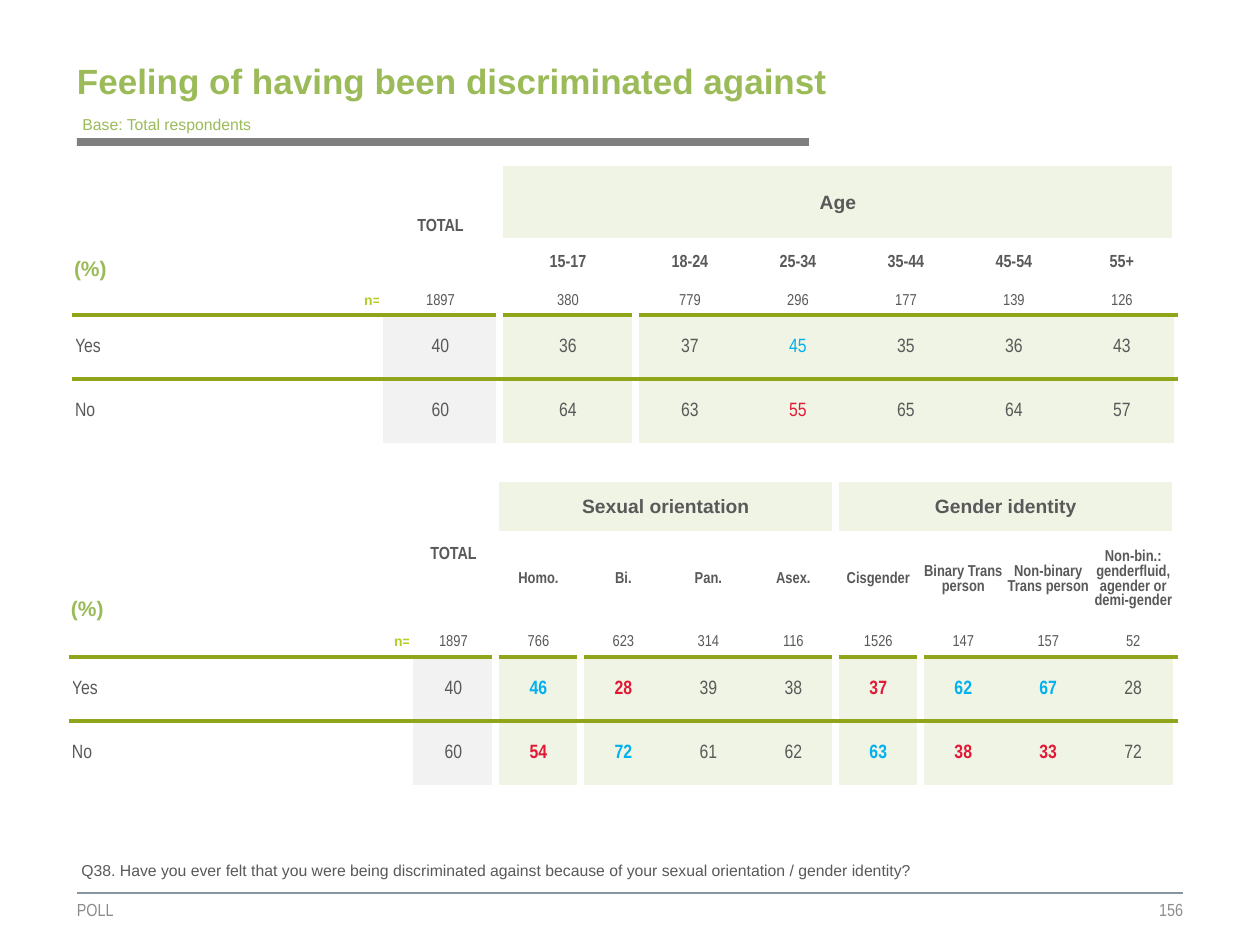
from lxml import etree
from pptx import Presentation, util as u
from pptx.dml.color import RGBColor
from pptx.enum import shapes, text
from pptx.oxml import ns

GREEN, GRAY, WHITE = "9BBB59", "595959", "FFFFFF"
PALE, LIGHT, RULE = "EFF4E4", "F2F2F2", "91A51B"
MARKS = {"+": "00B0F0", "-": "E31836"}
NARROW = "Arial Narrow"
LEFT, MID, RIGHT = text.PP_ALIGN.LEFT, text.PP_ALIGN.CENTER, text.PP_ALIGN.RIGHT
PLAIN = "{2D5ABB26-0587-4C30-8999-92F81FD0307C}"


def px(n):
    return u.Emu(round(n * 914400 / 126))


def rgb(code):
    return RGBColor.from_string(code)


def style(para, size, color=GRAY, bold=False, face="Arial", align=LEFT):
    para.alignment = align
    for font in [para.font] + [run.font for run in para.runs]:
        font.size, font.name, font.bold = u.Pt(size), face, bold
        font.color.rgb = rgb(color)


def add_text(slide, box, words, size, pad=(0, 0), wrap=True, anchor="MIDDLE", **look):
    frame = slide.shapes.add_textbox(*map(px, box)).text_frame
    frame.word_wrap = wrap
    frame.vertical_anchor = text.MSO_ANCHOR[anchor]
    frame.margin_left = frame.margin_right = px(pad[0])
    frame.margin_top = frame.margin_bottom = px(pad[1])
    frame.text = words
    style(frame.paragraphs[0], size, **look)


def add_bar(slide, box, color):
    bar = slide.shapes.add_shape(shapes.MSO_SHAPE.RECTANGLE, *map(px, box))
    bar.shadow.inherit = False
    bar.fill.solid()
    bar.fill.fore_color.rgb = rgb(color)
    bar.line.fill.background()


def add_rule(slide, x, y, end, color):
    line = slide.shapes.add_connector(
        shapes.MSO_CONNECTOR.STRAIGHT, px(x), px(y), px(end), px(y))
    line.line.color.rgb = rgb(color)
    line.line.width = u.Pt(1.5)
    etree.SubElement(line._element.spPr, ns.qn("a:effectLst"))


def set_edges(cell, edges):
    props = cell._tc.get_or_add_tcPr()
    sides = [side for side in "LRTB" if side in edges]
    for i, side in enumerate(sides):
        color, width = edges[side]
        line = etree.Element(ns.qn("a:ln" + side), w=str(u.Pt(width)))
        fill = etree.SubElement(line, ns.qn("a:solidFill"))
        etree.SubElement(fill, ns.qn("a:srgbClr"), val=color)
        props.insert(i, line)


def put(cell, words, size, anchor="MIDDLE", pad=(1, 1, 1, 0), lead=None, **look):
    cell.vertical_anchor = text.MSO_ANCHOR[anchor]
    (cell.margin_left, cell.margin_top,
     cell.margin_right, cell.margin_bottom) = map(px, pad)
    cell.text_frame.text = words
    para = cell.text_frame.paragraphs[0]
    para.line_spacing = lead
    style(para, size, **look)


def make_grid(slide, x, y, cols, rows):
    frame = slide.shapes.add_table(
        len(rows), len(cols), px(x), px(y), px(sum(cols)), px(sum(rows)))
    grid = frame.table
    grid.first_row = grid.horz_banding = False
    grid._tbl.tblPr.find(ns.qn("a:tableStyleId")).text = PLAIN
    for col, wide in zip(grid.columns, cols):
        col.width = px(wide)
    for row, high in zip(grid.rows, rows):
        row.height = px(high)
    for cell in grid.iter_cells():
        cell.fill.background()
        put(cell, "", 6)
    return grid


def tint(cell, color):
    cell.fill.solid()
    cell.fill.fore_color.rgb = rgb(color)


def fill_heads(grid, deep, groups, names, size):
    head = len(grid.rows) - 4
    unit = grid.cell(head - deep + 1, 0)
    if deep > 1:
        unit.merge(grid.cell(head, 0))
    put(unit, "(%)", 12, "BOTTOM", (0, 6, 0, 6), 0.95, color=GREEN, bold=True)
    total = grid.cell(0, 1)
    total.merge(grid.cell(head, 1))
    put(total, "TOTAL", 10, bold=True, face=NARROW, align=MID)
    start = 2
    for name, span in groups:
        cell = grid.cell(0, start)
        cell.merge(grid.cell(deep - 1, start + span - 1))
        tint(cell, PALE)
        put(cell, name, 11, bold=True, align=MID)
        set_edges(cell, {"L": (WHITE, 4.5), "R": (WHITE, 4.5)})
        start += span
    for j, name in enumerate(names, 2):
        put(grid.cell(head, j), name, size, bold=True, face=NARROW, align=MID)


def fill_counts(grid, counts):
    row = len(grid.rows) - 3
    put(grid.cell(row, 0), "n=", 8, pad=(0, 6, 0, 6), lead=0.95,
        color="B5CC22", bold=True, align=RIGHT)
    for j, count in enumerate(counts, 1):
        put(grid.cell(row, j), count, 9, face=NARROW, align=MID)
    for j in range(len(grid.columns)):
        set_edges(grid.cell(row, j),
                  {"L": (WHITE, 3), "R": (WHITE, 3), "B": (RULE, 3)})


def fill_body(grid, groups, answers, bold):
    first, last = len(grid.rows) - 2, len(grid.columns) - 1
    starts = [2]
    for name, span in groups:
        starts.append(starts[-1] + span)
    for i, (label, values) in enumerate(answers, first):
        put(grid.cell(i, 0), label, 11, face=NARROW)
        for j, value in enumerate(values.split(), 1):
            mark = MARKS.get(value[0])
            cell = grid.cell(i, j)
            tint(cell, LIGHT if j == 1 else PALE)
            put(cell, value.lstrip("+-"), 11, color=mark or GRAY,
                bold=bool(mark) and bold, face=NARROW, align=MID)
        for j in range(last + 1):
            edges = {"T": (RULE, 3)} if i == first else {}
            if j < 2 or j in starts:
                edges["L"] = (WHITE, 4.5 if j > 1 else 3)
            if j == 0 or j + 1 in starts:
                edges["R"] = (WHITE, 3 if j in (0, last) else 4.5)
            set_edges(grid.cell(i, j), edges)


def add_grid(slide, place, cols, rows, deep, groups, names, size, counts, answers, bold):
    grid = make_grid(slide, *place, cols, rows)
    fill_heads(grid, deep, groups, names, size)
    fill_counts(grid, counts.split())
    fill_body(grid, groups, answers, bold)


def main():
    deck = Presentation()
    deck.slide_width, deck.slide_height = px(1260), px(945)
    slide = deck.slides.add_slide(deck.slide_layouts[6])
    add_rule(slide, 77, 893, 1183, "88959E")
    add_bar(slide, (77, 138, 732, 8), "7F7F7F")
    foot = dict(color="8C8C8C", face=NARROW)
    add_text(slide, (77, 893, 353, 33), "POLL", 10, **foot)
    add_text(slide, (825, 893, 358, 33), "156", 10, align=RIGHT, **foot)
    add_text(slide, (77, 37, 781, 87), "Feeling of having been discriminated against",
             20, color=GREEN, bold=True)
    add_text(slide, (70, 109, 197, 31), "Base: Total respondents", 9,
             (12.6, 6.3), False, "TOP", color=GREEN)
    add_text(slide, (69, 855, 1077, 31),
             "Q38. Have you ever felt that you were being discriminated against "
             "because of your sexual orientation / gender identity?",
             9, (12.6, 6.3), anchor="TOP")
    add_grid(slide, (74, 166), [307, 119, 136] + [108] * 5,
             [48, 22, 49, 28, 64, 64], 2, [("Age", 6)],
             ["15-17", "18-24", "25-34", "35-44", "45-54", "55+"], 10,
             "1897 380 779 296 177 139 126",
             [("Yes", "40 36 37 +45 35 36 43"), ("No", "60 64 63 -55 65 64 57")],
             False)
    add_grid(slide, (71, 482), [340] + [85] * 9, [49, 96, 30, 64, 64], 1,
             [("Sexual orientation", 4), ("Gender identity", 4)],
             ["Homo.", "Bi.", "Pan.", "Asex.", "Cisgender", "Binary Trans person",
              "Non-binary Trans person",
              "Non-bin.: genderfluid, agender or demi-gender"], 9,
             "1897 766 623 314 116 1526 147 157 52",
             [("Yes", "40 +46 -28 39 38 -37 +62 +67 28"),
              ("No", "60 -54 +72 61 62 +63 -38 -33 72")], True)
    deck.save("out.pptx")


if __name__ == "__main__":
    main()
